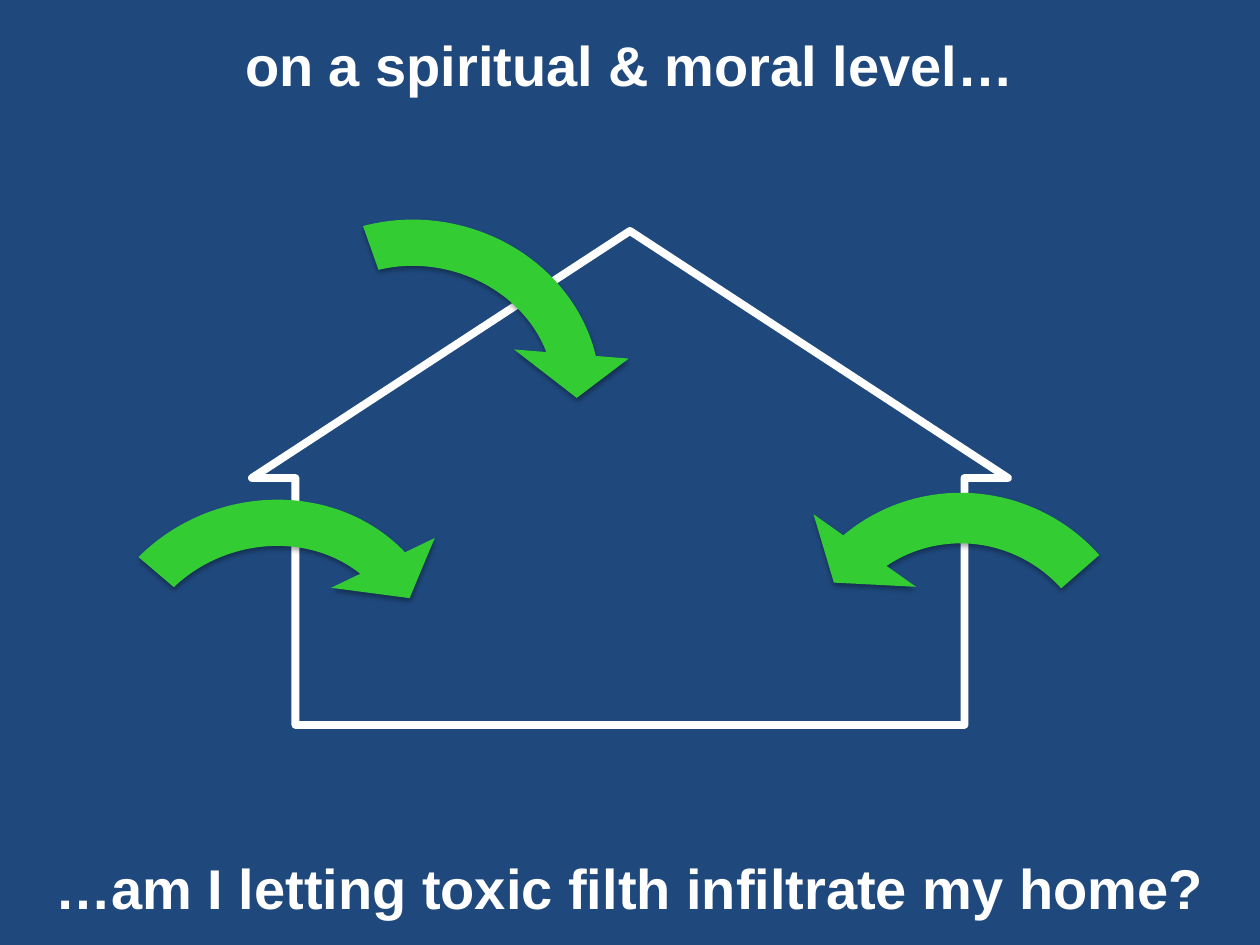
from lxml.etree import SubElement as Sub
from pptx import Presentation
from pptx.dml.color import RGBColor
from pptx.enum.shapes import MSO_SHAPE as Kind
from pptx.enum.text import MSO_ANCHOR as Anchor, PP_ALIGN as Align
from pptx.oxml.ns import qn
from pptx.util import Pt

PX = 914400 // 126
WIDE, HIGH = 1260, 945
NAVY = RGBColor(0x1F, 0x49, 0x7D)
GREEN = RGBColor(0x33, 0xCC, 0x33)
WHITE = RGBColor(0xFF, 0xFF, 0xFF)


def put_shape(slide, kind, box, fill=None, line=None, width=0):
    shape = slide.shapes.add_shape(kind, *(n * PX for n in box))
    shape.shadow.inherit = False
    if fill is None:
        shape.fill.background()
    else:
        shape.fill.solid()
        shape.fill.fore_color.rgb = fill
    if line is None:
        shape.line.fill.background()
    else:
        shape.line.color.rgb = line
        shape.line.width = Pt(width)
    return shape


def put_text(slide, text, box, size=32, color=WHITE, bold=True, font="Arial"):
    frame = slide.shapes.add_textbox(*(n * PX for n in box)).text_frame
    frame.word_wrap = True
    frame.vertical_anchor = Anchor.MIDDLE
    frame.margin_left = frame.margin_right = 0
    frame.margin_top = frame.margin_bottom = 0
    par = frame.paragraphs[0]
    par.alignment = Align.CENTER
    run = par.add_run()
    run.text = text
    run.font.size, run.font.bold, run.font.name = Pt(size), bold, font
    run.font.color.rgb = color


def add_shadow(shape):
    """Soft black shadow, straight down."""
    effects = shape.element.spPr.find(qn("a:effectLst"))
    outer = Sub(effects, qn("a:outerShdw"), blurRad=str(Pt(3.1)),
                dist=str(Pt(1.8)), dir="5400000", rotWithShape="0")
    black = Sub(outer, qn("a:srgbClr"), val="000000")
    Sub(black, qn("a:alpha"), val="35000")


def draw_text(slide, box):
    """Question split between the top and the foot of the box."""
    left, top, wide, high = box
    line, gap = 64, 32
    put_text(slide, "on a spiritual & moral level…",
             (left, top + gap, wide, line))
    put_text(slide, "…am I letting toxic filth infiltrate my home?",
             (left, top + high - line - 26, wide, line))


def draw_house(slide, box):
    """Outline of a house: a wide up arrow."""
    house = put_shape(slide, Kind.UP_ARROW, box, line=WHITE, width=4.5)
    house.adjustments[0] = 0.885
    house.adjustments[1] = 0.5


def draw_arrow(slide, box, turn, start=143.22, flip=False):
    """Curved arrow that leads into the house."""
    arrow = put_shape(slide, Kind.CIRCULAR_ARROW, box, fill=GREEN)
    for i, value in enumerate((0.116, 9.73, 201.91, start, 0.144)):
        arrow.adjustments[i] = value
    arrow.rotation = turn
    if flip:
        arrow.element.spPr.find(qn("a:xfrm")).set("flipH", "1")
    add_shadow(arrow)


def main():
    deck = Presentation()
    deck.slide_width, deck.slide_height = WIDE * PX, HIGH * PX
    slide = deck.slides.add_slide(deck.slide_layouts[6])
    page = (0, 0, WIDE, HIGH)

    # Backdrop and wording
    put_shape(slide, Kind.RECTANGLE, page, fill=NAVY)
    draw_text(slide, page)

    # House with arrows from the left, the roof and the right
    draw_house(slide, (252, 231, 756, 494))
    draw_arrow(slide, (52, 467, 431, 399), 341.6)
    draw_arrow(slide, (204, 186, 431, 399), 11.8)
    draw_arrow(slide, (742, 456, 442, 436), 28, start=149.46, flip=True)

    deck.save("out.pptx")


if __name__ == "__main__":
    main()
